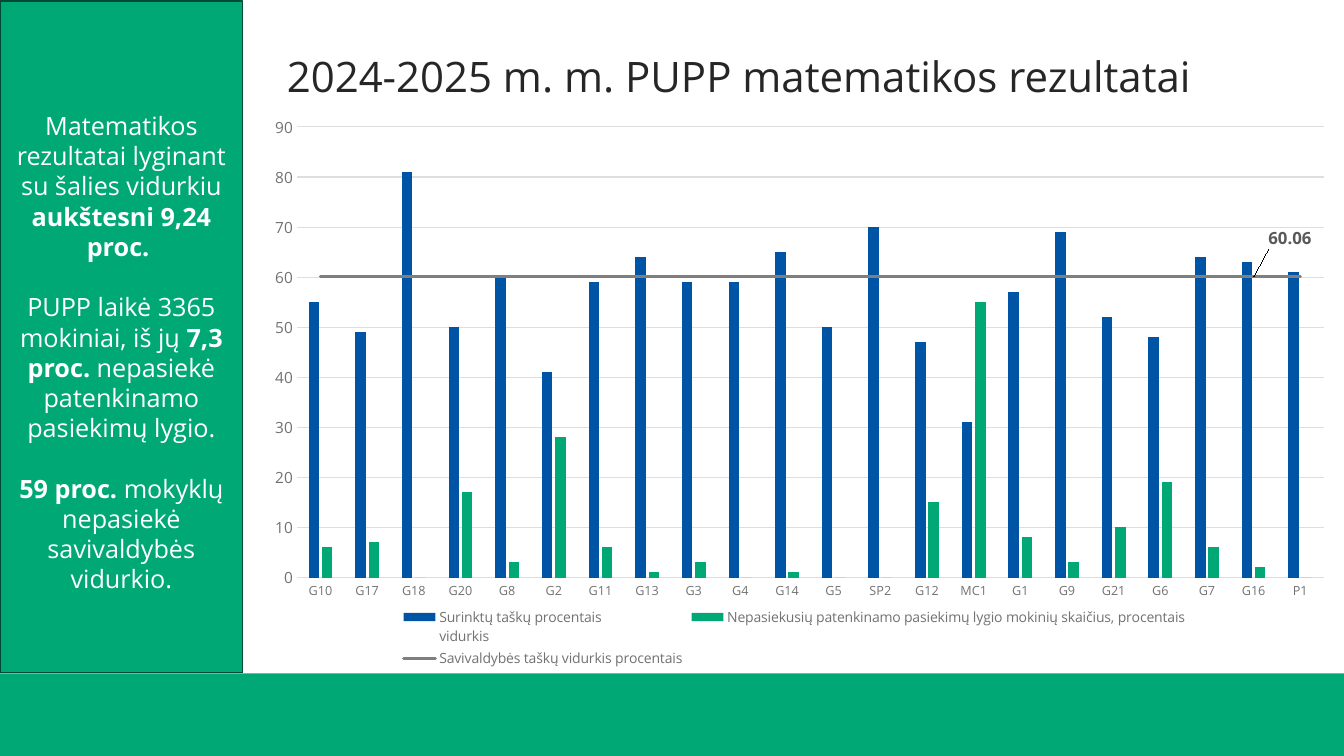
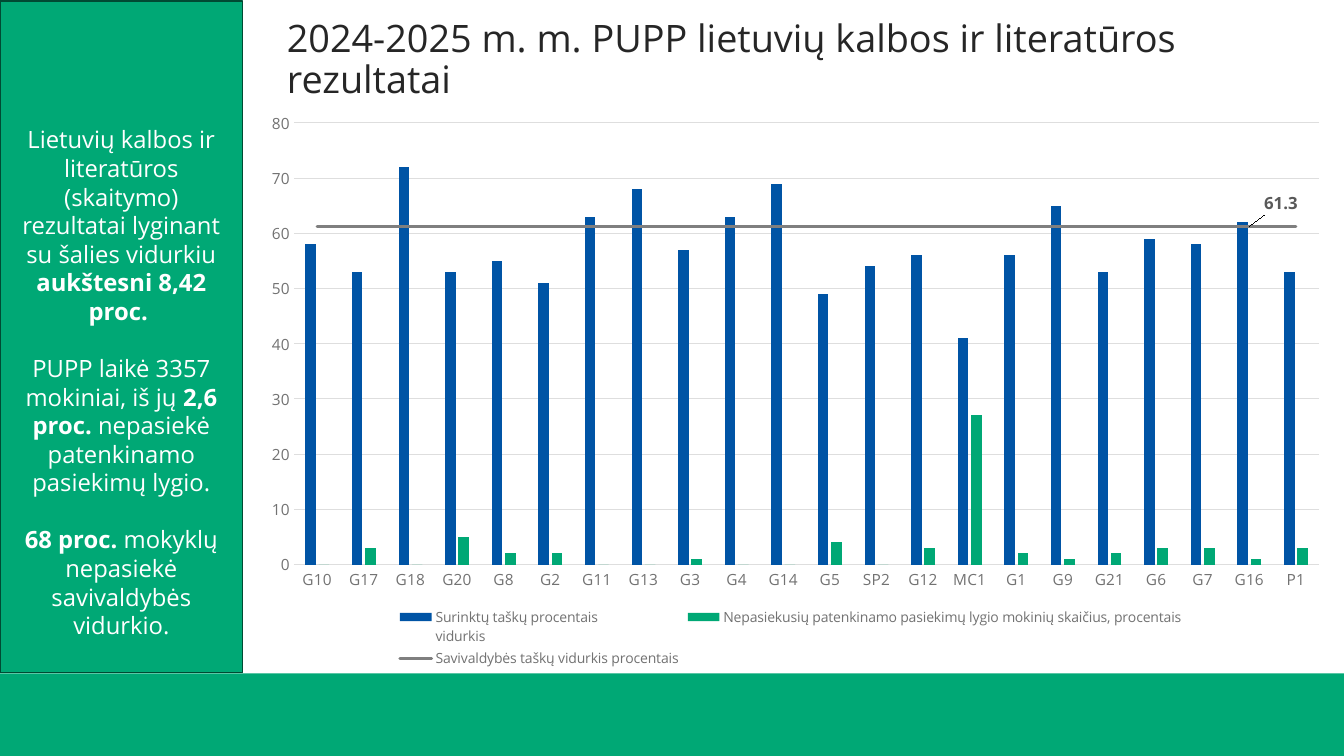
from copy import deepcopy

from lxml import etree
from pptx import Presentation
from pptx import util as u
from pptx.chart.data import CategoryChartData
from pptx.dml.color import RGBColor
from pptx.enum import chart as ch
from pptx.enum import shapes, text
from pptx.oxml import parse_xml
from pptx.oxml.ns import nsdecls, qn

GREEN, BLUE, GREY = "00A875", "0054A5", "7F7F7F"
EDGE, PALE, DIM, DARK, WHITE = "004A33", "DEDEDE", "727272", "262626", "FFFFFF"
FONT = "Open Sans"
SCHOOLS = ("G10 G17 G18 G20 G8 G2 G11 G13 G3 G4 G14 G5 SP2 G12 MC1 "
           "G1 G9 G21 G6 G7 G16 P1").split()
NAMES = ("Surinktų taškų procentais\nvidurkis",
         "Nepasiekusių patenkinamo pasiekimų lygio mokinių skaičius, procentais",
         "Savivaldybės taškų vidurkis procentais")
MARK = SCHOOLS.index("G16")


def tint(code):
    return RGBColor.from_string(code)


def place(x, y, w=None, h=None, inner=False):
    parts = [("xMode", "edge"), ("yMode", "edge")] if inner else []
    if inner:
        parts.insert(0, ("layoutTarget", "inner"))
    parts += [("x", x), ("y", y)]
    if inner:
        parts += [("w", w), ("h", h)]
    root = parse_xml(f"<c:layout {nsdecls('c')}><c:manualLayout/></c:layout>")
    for tag, val in parts:
        etree.SubElement(root[0], qn(f"c:{tag}")).set("val", str(val))
    return root


class Deck:
    def __init__(self):
        self.prs = Presentation()
        self.prs.slide_width, self.prs.slide_height = u.Cm(33.87), u.Cm(19.05)
        self.slide = None

    def page(self):
        self.slide = self.prs.slides.add_slide(self.prs.slide_layouts[6])
        self.block(0, 16.97, 33.87, 2.08)

    def style(self, font, size, color, bold=None):
        font.name, font.size, font.bold = FONT, u.Pt(size), bold
        font.color.rgb = tint(color)

    def block(self, x, y, w, h, edge=None):
        box = self.slide.shapes.add_shape(
            shapes.MSO_SHAPE.RECTANGLE, u.Cm(x), u.Cm(y), u.Cm(w), u.Cm(h))
        box.shadow.inherit = False
        box.fill.solid()
        box.fill.fore_color.rgb = tint(GREEN)
        if edge:
            box.line.color.rgb = tint(edge)
            box.line.width = u.Pt(1)
        else:
            box.line.fill.background()
        return box

    def title(self, words, size):
        box = self.slide.shapes.add_textbox(
            u.Cm(6.98), u.Cm(0.43), u.Cm(26.3), u.Cm(2.26))
        frame = box.text_frame
        frame.word_wrap = True
        frame.vertical_anchor = text.MSO_ANCHOR.BOTTOM
        para = frame.paragraphs[0]
        para.line_spacing = 0.9
        run = para.add_run()
        run.text = words
        self.style(run.font, size, DARK)

    def side(self, notes, size, top):
        frame = self.block(0, 0.03, 6.12, 16.92, EDGE).text_frame
        frame.word_wrap = True
        frame.vertical_anchor = text.MSO_ANCHOR.MIDDLE
        frame.margin_top = u.Cm(top)
        for i, note in enumerate(notes):
            para = frame.add_paragraph() if i else frame.paragraphs[0]
            para.alignment = text.PP_ALIGN.CENTER
            if i:
                para.space_before = u.Pt(size * 1.2)
            for j, part in enumerate(note.split("*")):
                if part:
                    run = para.add_run()
                    run.text = part
                    self.style(run.font, size, WHITE, j % 2 == 1)

    def chart(self, area, plot, scores, fails, mean, top, small, shift):
        data = CategoryChartData()
        data.categories = SCHOOLS
        for name, vals in zip(NAMES, (scores, fails, [mean] * len(SCHOOLS))):
            data.add_series(name, vals)
        chart = self.slide.shapes.add_chart(
            ch.XL_CHART_TYPE.COLUMN_CLUSTERED, *map(u.Cm, area), data).chart
        chart.has_title = False
        self.style(chart.font, 10, DARK)
        chart.has_legend = True
        chart.legend.position = ch.XL_LEGEND_POSITION.BOTTOM
        chart.legend.include_in_layout = False
        self.style(chart.legend.font, 10, DIM)
        self.axes(chart, top, small)
        bars = chart.plots[0]
        bars.gap_width, bars.overlap, bars.vary_by_categories = 219, -27, False
        for row, color in zip(bars.series, (BLUE, GREEN)):
            row.format.fill.solid()
            row.format.fill.fore_color.rgb = tint(color)
        self.mean(chart, shift)
        base = chart.plots[0]._element.getparent()
        for old in base.findall(qn("c:layout")):
            base.remove(old)
        base.insert(0, place(*plot, inner=True))

    def axes(self, chart, top, small):
        cat, val = chart.category_axis, chart.value_axis
        for axis, size in ((cat, small), (val, 11)):
            axis.major_tick_mark = ch.XL_TICK_MARK.NONE
            axis.minor_tick_mark = ch.XL_TICK_MARK.NONE
            self.style(axis.tick_labels.font, size, DIM)
        val.minimum_scale, val.maximum_scale, val.major_unit = 0, top, 10
        val.has_major_gridlines = True
        val.format.line.fill.background()
        for line in (cat.format.line, val.major_gridlines.format.line):
            line.color.rgb = tint(PALE)
            line.width = u.Pt(0.75)

    def mean(self, chart, shift):
        bars = chart.plots[0]._element
        row = bars.findall(qn("c:ser"))[2]
        for flag in row.findall(qn("c:invertIfNegative")):
            row.remove(flag)
        plot = parse_xml(
            f'<c:lineChart {nsdecls("c")}><c:grouping val="standard"/>'
            '<c:varyColors val="0"/><c:marker val="1"/></c:lineChart>')
        plot.insert(2, row)
        for axis in bars.findall(qn("c:axId")):
            plot.append(deepcopy(axis))
        bars.addnext(plot)
        line = chart.plots[1].series[0]
        line.smooth = False
        line.marker.style = ch.XL_MARKER_STYLE.NONE
        line.format.line.color.rgb = tint(GREY)
        line.format.line.width = u.Pt(2.25)
        row.find(qn("c:spPr")).find(qn("a:ln")).set("cap", "rnd")
        label = line.points[MARK].data_label
        self.style(label.font, 12, "595959", True)
        label.position = ch.XL_LABEL_POSITION.RIGHT
        line.data_labels.show_value = False
        tags = row.find(qn("c:dLbls"))
        tags.find(qn("c:dLbl")).insert(1, place(*shift))
        tags.append(parse_xml(
            f'<c:extLst {nsdecls("c")}>'
            '<c:ext uri="{CE6537A1-D6FC-4f65-9D91-7224C49458BB}" xmlns:c15='
            '"http://schemas.microsoft.com/office/drawing/2012/chart">'
            '<c15:showLeaderLines val="1"/></c:ext></c:extLst>'))


def main():
    deck = Deck()

    deck.page()
    deck.title("2024-2025 m. m. PUPP matematikos rezultatai", 30)
    deck.side((
        "Matematikos rezultatai lyginant su šalies vidurkiu *aukštesni 9,24 proc. *",
        "PUPP laikė 3365 mokiniai, iš jų *7,3 proc.* nepasiekė patenkinamo pasiekimų lygio.",
        "*59 proc. *mokyklų nepasiekė savivaldybės vidurkio."), 18, 0.89)
    deck.chart(
        (6.4, 2.92, 27.23, 14.02), (0.04, 0.02, 0.95, 0.81),
        (55, 49, 81, 50, 60, 41, 59, 64, 59, 59, 65,
         50, 70, 47, 31, 57, 69, 52, 48, 64, 63, 61),
        (6, 7, 0, 17, 3, 28, 6, 1, 3, 0, 1,
         0, 0, 15, 55, 8, 3, 10, 19, 6, 2, 0),
        60.06, 90, 9, (0.01, -0.07))

    deck.page()
    deck.title("2024-2025 m. m. PUPP lietuvių kalbos ir literatūros rezultatai", 27)
    deck.side((
        "Lietuvių kalbos ir literatūros (skaitymo) rezultatai lyginant su šalies "
        "vidurkiu *aukštesni 8,42 proc. *",
        "PUPP laikė 3357 mokiniai, iš jų *2,6 proc.* nepasiekė patenkinamo pasiekimų lygio.",
        "*68 proc. *mokyklų nepasiekė savivaldybės vidurkio."), 17, 2.41)
    deck.chart(
        (6.32, 2.67, 27.2, 14.27), (0.04, 0.03, 0.95, 0.78),
        (58, 53, 72, 53, 55, 51, 63, 68, 57, 63, 69,
         49, 54, 56, 41, 56, 65, 53, 59, 58, 62, 53),
        (0, 3, 0, 5, 2, 2, 0, 0, 1, 0, 0,
         4, 0, 3, 27, 2, 1, 2, 3, 3, 1, 3),
        61.3, 80, 11, (0.01, -0.04))

    deck.prs.save("out.pptx")


if __name__ == "__main__":
    main()
